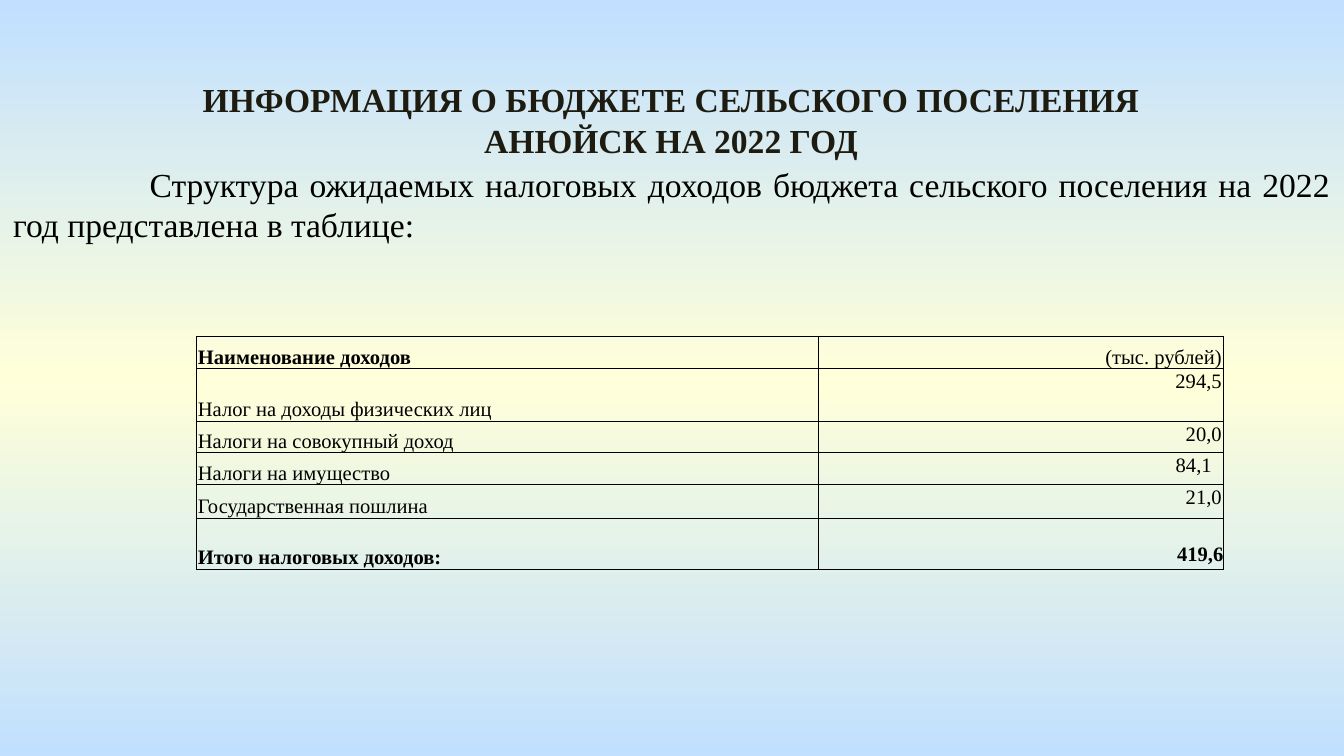
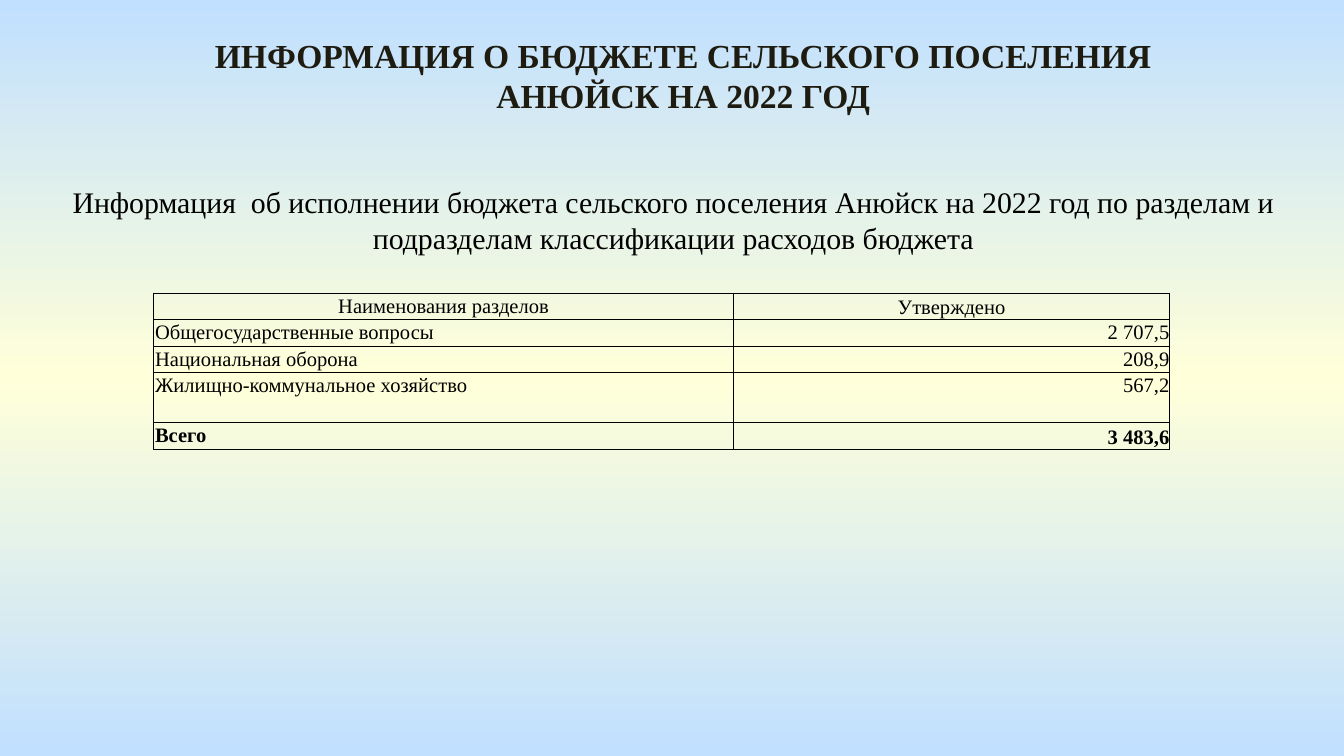
from copy import deepcopy
from dataclasses import dataclass, field

from lxml.etree import SubElement
from pptx import Presentation
from pptx.dml.color import RGBColor
from pptx.enum.text import MSO_ANCHOR as Anchor, MSO_AUTO_SIZE as AutoSize, PP_ALIGN as Align
from pptx.oxml.ns import qn
from pptx.util import Cm, Pt


# Theme: colours, font and type sizes
@dataclass(frozen=True)
class Theme:
    font: str = "Times New Roman"
    sky: str = "C1E0FF"
    cream: str = "FFFFD9"
    title: str = "1E1C11"
    ink: str = "000000"
    title_size: float = 18
    cell_size: float = 11
    border: float = 0.5


THEME = Theme()
TITLE = "ИНФОРМАЦИЯ О БЮДЖЕТЕ СЕЛЬСКОГО ПОСЕЛЕНИЯ АНЮЙСК НА 2022 ГОД"


# Descriptions of the repeated elements, lengths in centimetres
@dataclass(frozen=True)
class Block:
    text: str
    left: float
    top: float
    width: float
    height: float
    size: float
    align: Align = Align.CENTER
    indent: float = 0
    color: str = THEME.ink
    bold: bool = False


@dataclass(frozen=True)
class Entry:
    text: str
    align: Align = Align.RIGHT
    anchor: Anchor = Anchor.TOP
    bold: bool = False
    right: float = 0.03
    bottom: float = 0


@dataclass(frozen=True)
class Grid:
    left: float
    top: float
    columns: tuple[float, ...]
    heights: tuple[float, ...]
    rows: list[tuple[Entry, Entry]] = field(default_factory=list)


@dataclass(frozen=True)
class BudgetPage:
    title: Block
    intro: Block
    grid: Grid


def page_title(left: float, top: float) -> Block:
    return Block(TITLE, left, top, 19.63, 1.8, THEME.title_size,
                 color=THEME.title, bold=True)


def income_label(text: str, bold: bool = False) -> Entry:
    return Entry(text, Align.JUSTIFY, Anchor.BOTTOM, bold)


def section_label(text: str, bold: bool = False) -> Entry:
    return Entry(text, Align.LEFT, bold=bold)


def amount(text: str) -> Entry:
    return Entry(text, right=0)


PAGES = [
    BudgetPage(
        page_title(2.87, 1.37),
        Block("Структура ожидаемых налоговых доходов бюджета сельского поселения "
              "на 2022 год представлена в таблице:",
              0, 2.97, 25.4, 1.8, 18, Align.JUSTIFY, indent=2.58),
        Grid(3.71, 6.35, (11.76, 7.65), (0.62, 0.99, 0.6, 0.6, 0.64, 0.96), [
            (income_label("Наименование доходов", True),
             Entry("(тыс. рублей)", anchor=Anchor.BOTTOM)),
            (income_label("Налог на доходы физических лиц"), Entry("294,5")),
            (income_label("Налоги на совокупный доход"), Entry("20,0")),
            (income_label("Налоги на имущество"), Entry("84,1", right=0.22)),
            (income_label("Государственная пошлина"), Entry("21,0")),
            (income_label("Итого налоговых доходов:", True),
             Entry("419,6", anchor=Anchor.BOTTOM, bold=True, right=0, bottom=0.06)),
        ]),
    ),
    BudgetPage(
        page_title(3.1, 0.53),
        Block("Информация  об исполнении бюджета сельского поселения Анюйск на 2022 год "
              "по разделам и подразделам классификации расходов бюджета",
              0.03, 3.35, 25.4, 1.63, 16),
        Grid(2.9, 5.54, (10.97, 8.23), (0.49, 0.51, 0.48, 0.95, 0.48), [
            (Entry("Наименования разделов", Align.CENTER, Anchor.MIDDLE),
             Entry("Утверждено", Align.CENTER, Anchor.BOTTOM)),
            (section_label("Общегосударственные вопросы"), amount("2 707,5")),
            (section_label("Национальная оборона"), amount("208,9")),
            (section_label("Жилищно-коммунальное хозяйство"), amount("567,2")),
            (section_label("Всего", True),
             Entry("3 483,6", anchor=Anchor.BOTTOM, bold=True, right=0)),
        ]),
    ),
]


def style_text(frame, size: float, align: Align, color: str, bold: bool) -> None:
    for para in frame.paragraphs:
        para.alignment = align
        for span in para.runs:
            span.font.name = THEME.font
            span.font.size = Pt(size)
            span.font.bold = bold
            span.font.color.rgb = RGBColor.from_string(color)


def paint_background(master) -> None:
    fill = master.background.fill
    fill.gradient()
    fill.gradient_angle = 270
    for stop, position in zip(fill.gradient_stops, (0, 1)):
        stop.color.rgb = RGBColor.from_string(THEME.sky)
        stop.position = position
    # The cream band in the middle is a third stop
    stops = master.element.find(f".//{qn('a:gsLst')}")
    middle = deepcopy(stops[0])
    middle.set("pos", "50000")
    middle.find(qn("a:srgbClr")).set("val", THEME.cream)
    stops.insert(1, middle)


def fill_box(box, block: Block) -> None:
    box.left, box.top = Cm(block.left), Cm(block.top)
    box.width, box.height = Cm(block.width), Cm(block.height)
    frame = box.text_frame
    frame.text = block.text
    frame.word_wrap = True
    frame.auto_size = AutoSize.SHAPE_TO_FIT_TEXT
    frame.vertical_anchor = Anchor.TOP
    style_text(frame, block.size, block.align, block.color, block.bold)
    if block.indent:
        frame.paragraphs[0]._p.get_or_add_pPr().set("indent", str(Cm(block.indent)))


def draw_borders(cell) -> None:
    properties = cell._tc.get_or_add_tcPr()
    for index, side in enumerate(("lnL", "lnR", "lnT", "lnB")):
        line = SubElement(properties, qn(f"a:{side}"), w=str(Pt(THEME.border)))
        solid = SubElement(line, qn("a:solidFill"))
        SubElement(solid, qn("a:srgbClr"), val=THEME.ink)
        properties.insert(index, line)


def fill_cell(cell, entry: Entry) -> None:
    cell.text_frame.text = entry.text
    cell.vertical_anchor = entry.anchor
    cell.margin_left = cell.margin_top = Cm(0.03)
    cell.margin_right, cell.margin_bottom = Cm(entry.right), Cm(entry.bottom)
    style_text(cell.text_frame, THEME.cell_size, entry.align, THEME.ink, entry.bold)
    cell.fill.background()
    draw_borders(cell)


def draw_grid(page, grid: Grid) -> None:
    table = page.shapes.add_table(
        len(grid.heights), len(grid.columns), Cm(grid.left), Cm(grid.top),
        Cm(sum(grid.columns)), Cm(sum(grid.heights))).table
    table.first_row = table.horz_banding = False
    for column, width in zip(table.columns, grid.columns):
        column.width = Cm(width)
    for row, height, entries in zip(table.rows, grid.heights, grid.rows):
        row.height = Cm(height)
        for cell, entry in zip(row.cells, entries):
            fill_cell(cell, entry)


def draw_page(deck, content: BudgetPage) -> None:
    page = deck.slides.add_slide(deck.slide_layouts.get_by_name("Title Only"))
    fill_box(page.shapes.title, content.title)
    fill_box(page.shapes.add_textbox(0, 0, 0, 0), content.intro)
    draw_grid(page, content.grid)


def main() -> None:
    deck = Presentation()
    deck.slide_width, deck.slide_height = Cm(25.4), Cm(14.29)
    paint_background(deck.slide_master)
    for content in PAGES:
        draw_page(deck, content)
    deck.save("out.pptx")


if __name__ == "__main__":
    main()
